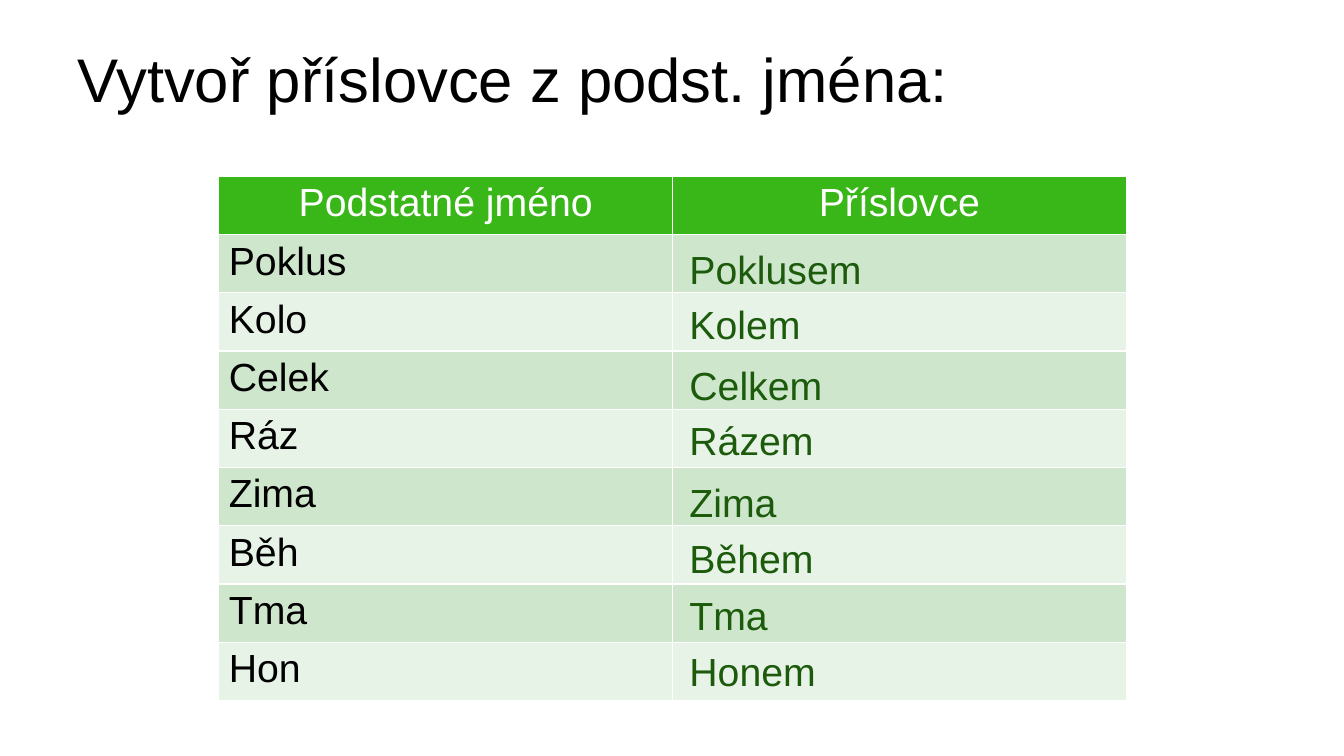
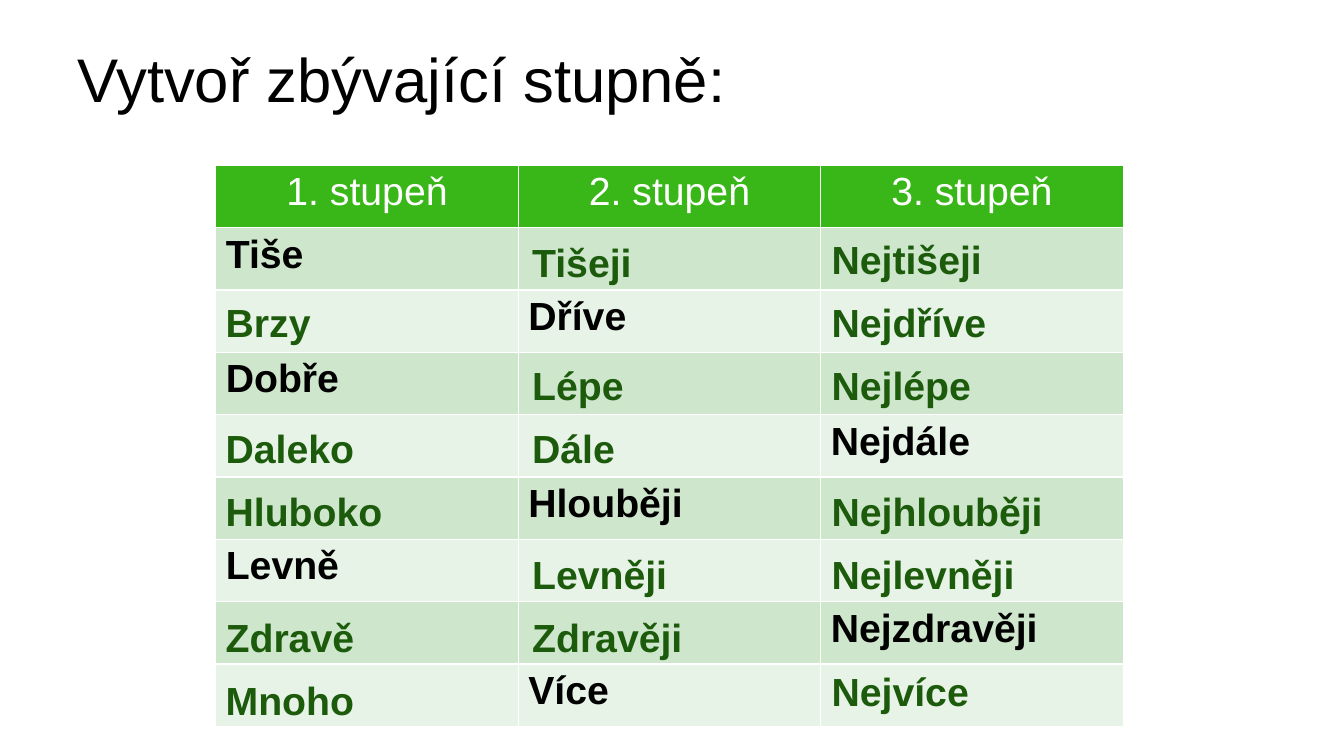
from dataclasses import dataclass
from typing import Optional

from lxml.etree import SubElement
from pptx import Presentation
from pptx.dml.color import RGBColor
from pptx.enum.text import MSO_ANCHOR, PP_ALIGN
from pptx.oxml.ns import qn
from pptx.slide import Slide
from pptx.util import Inches, Pt

BLACK = RGBColor(0x00, 0x00, 0x00)
WHITE = RGBColor(0xFF, 0xFF, 0xFF)
HEADER_GREEN = RGBColor(0x3A, 0xB7, 0x18)
ANSWER_GREEN = RGBColor(0x1D, 0x5B, 0x0C)
BANDS = (RGBColor(0xCE, 0xE6, 0xCC), RGBColor(0xE8, 0xF3, 0xE8))

FONT = "Arial"
TITLE_SIZE = 44
BODY_SIZE = 28
TABLE_WIDTH = 9
ANSWER_HEIGHT = 0.57


@dataclass(frozen=True)
class Answer:
    text: str
    left: float
    top: float
    width: float


@dataclass(frozen=True)
class Exercise:
    title: str
    left: float
    top: float
    height: float
    headers: tuple[str, ...]
    rows: list[list[Optional[str]]]
    answers: list[Answer]
    bold: bool


def add_run(paragraph, text: str, size: int, color: RGBColor, bold: bool = False) -> None:
    run = paragraph.add_run()
    run.text = text
    run.font.name = FONT
    run.font.size = Pt(size)
    run.font.bold = bold
    run.font.color.rgb = color


def add_text(slide: Slide, text: str, box: tuple[float, float, float, float], size: int,
             color: RGBColor, margin_top: float, bold: bool = False) -> None:
    frame = slide.shapes.add_textbox(*(Inches(length) for length in box)).text_frame
    frame.word_wrap = True
    frame.vertical_anchor = MSO_ANCHOR.TOP
    frame.margin_top = Inches(margin_top)
    add_run(frame.paragraphs[0], text, size, color, bold)


def add_borders(cell) -> None:
    properties = cell._tc.get_or_add_tcPr()
    for side in ("a:lnL", "a:lnR", "a:lnT", "a:lnB"):
        line = SubElement(properties, qn(side), w=str(Pt(1)))
        fill = SubElement(line, qn("a:solidFill"))
        SubElement(fill, qn("a:srgbClr"), val=str(WHITE))


def add_word_table(slide: Slide, exercise: Exercise) -> None:
    grid = [list(exercise.headers), *exercise.rows]
    column_count = len(exercise.headers)
    table = slide.shapes.add_table(
        len(grid), column_count, Inches(exercise.left), Inches(exercise.top),
        Inches(TABLE_WIDTH), Inches(exercise.height)).table
    for column in table.columns:
        column.width = Inches(TABLE_WIDTH / column_count)
    for row_index, words in enumerate(grid):
        is_header = row_index == 0
        table.rows[row_index].height = Inches(exercise.height / len(grid))
        for column_index, word in enumerate(words):
            cell = table.cell(row_index, column_index)
            add_borders(cell)
            cell.fill.solid()
            cell.fill.fore_color.rgb = HEADER_GREEN if is_header else BANDS[(row_index - 1) % 2]
            if word is None:
                continue
            paragraph = cell.text_frame.paragraphs[0]
            paragraph.alignment = PP_ALIGN.CENTER if is_header else PP_ALIGN.LEFT
            add_run(paragraph, word, BODY_SIZE, WHITE if is_header else BLACK,
                    exercise.bold and not is_header)


def add_exercise(presentation, exercise: Exercise) -> None:
    slide = presentation.slides.add_slide(presentation.slide_layouts[6])
    add_text(slide, exercise.title, (0.67, 0.3, 12, 1.25), TITLE_SIZE, BLACK, 0.11)
    add_word_table(slide, exercise)
    for answer in exercise.answers:
        add_text(slide, answer.text, (answer.left, answer.top, answer.width, ANSWER_HEIGHT),
                 BODY_SIZE, ANSWER_GREEN, 0.09, exercise.bold)


def adverb_exercise() -> Exercise:
    words = [
        ("Poklus", "Poklusem", 2.34),
        ("Kolo", "Kolem", 2.89),
        ("Celek", "Celkem", 3.49),
        ("Ráz", "Rázem", 4.04),
        ("Zima", "Zima", 4.66),
        ("Běh", "Během", 5.21),
        ("Tma", "Tma", 5.78),
        ("Hon", "Honem", 6.33),
    ]
    return Exercise(
        "Vytvoř příslovce z podst. jména:", 2.17, 1.75, 5.2,
        ("Podstatné jméno", "Příslovce"),
        [[noun, None] for noun, _, _ in words],
        [Answer(adverb, 6.74, top, 3.2) for _, adverb, top in words],
        bold=False)


def degree_exercise() -> Exercise:
    degrees = [
        ("Tiše", "Tišeji", "Nejtišeji"),
        ("Brzy", "Dříve", "Nejdříve"),
        ("Dobře", "Lépe", "Nejlépe"),
        ("Daleko", "Dále", "Nejdále"),
        ("Hluboko", "Hlouběji", "Nejhlouběji"),
        ("Levně", "Levněji", "Nejlevněji"),
        ("Zdravě", "Zdravěji", "Nejzdravěji"),
        ("Mnoho", "Více", "Nejvíce"),
    ]
    given_columns = (0, 1, 0, 2, 1, 0, 2, 1)
    answer_lefts = (2.14, 5.18, 8.15)
    first_top, step = 2.24, 5 / 8
    nudges = {"Tišeji": 0.03, "Nejvíce": -0.08}

    rows: list[list[Optional[str]]] = []
    answers: list[Answer] = []
    for index, (words, given) in enumerate(zip(degrees, given_columns)):
        rows.append([word if column == given else None for column, word in enumerate(words)])
        answers.extend(
            Answer(word, answer_lefts[column], first_top + index * step + nudges.get(word, 0), 2.81)
            for column, word in enumerate(words) if column != given)
    return Exercise(
        "Vytvoř zbývající stupně:", 2.14, 1.64, 5.57,
        ("1. stupeň", "2. stupeň", "3. stupeň"), rows, answers, bold=True)


def main() -> None:
    presentation = Presentation()
    presentation.slide_width = Inches(13.33)
    presentation.slide_height = Inches(7.5)
    for exercise in (adverb_exercise(), degree_exercise()):
        add_exercise(presentation, exercise)
    presentation.save("out.pptx")


if __name__ == "__main__":
    main()
